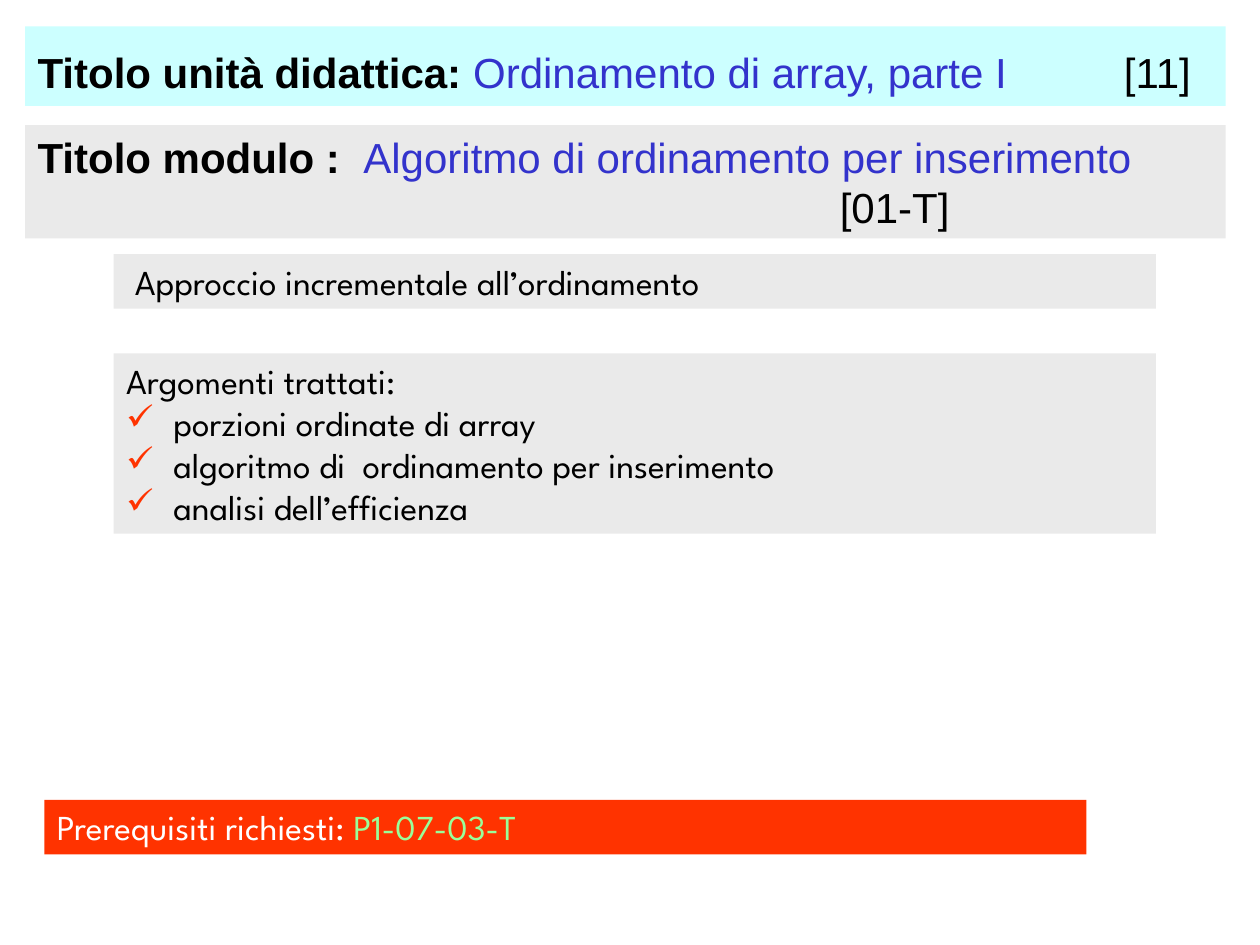
from dataclasses import dataclass

from lxml import etree
from pptx import Presentation
from pptx.dml.color import RGBColor
from pptx.enum.shapes import MSO_SHAPE
from pptx.enum.text import MSO_ANCHOR, MSO_AUTO_SIZE, PP_ALIGN
from pptx.oxml.ns import qn
from pptx.slide import Slide
from pptx.util import Pt

RECTANGLE = MSO_SHAPE.RECTANGLE
TOP = MSO_ANCHOR.TOP
LEFT = PP_ALIGN.LEFT
GROW = MSO_AUTO_SIZE.SHAPE_TO_FIT_TEXT

BLACK = RGBColor(0x00, 0x00, 0x00)
WHITE = RGBColor(0xFF, 0xFF, 0xFF)
BLUE = RGBColor(0x33, 0x33, 0xCC)
CYAN = RGBColor(0xCC, 0xFF, 0xFF)
GRAY = RGBColor(0xEA, 0xEA, 0xEA)
RED = RGBColor(0xFF, 0x33, 0x00)
GREEN = RGBColor(0x99, 0xFF, 0x99)

HEADING_FONT = "Arial"
BODY_FONT = "League Spartan"
BULLET_INDENT = 27


@dataclass(frozen=True)
class Span:
    text: str
    color: RGBColor = BLACK
    size: float = 20
    font: str = BODY_FONT
    bold: bool = False


@dataclass(frozen=True)
class Line:
    spans: tuple[Span, ...]
    indent: float = 0
    tab: float = 0
    bullet: str = ""


@dataclass(frozen=True)
class Panel:
    left: float
    top: float
    width: float
    height: float
    fill: RGBColor
    lines: tuple[Line, ...]


def heading(text: str, color: RGBColor = BLACK, bold: bool = False, size: float = 24) -> Span:
    return Span(text, color, size, HEADING_FONT, bold)


def topic(text: str) -> Line:
    return Line((Span(text),), indent=BULLET_INDENT, bullet="✓")


PANELS = (
    Panel(14.4, 15.1, 686, 45.4, CYAN, (
        Line((
            heading("Titolo unità didattica: ", bold=True),
            heading("Ordinamento di array, parte I\t", BLUE),
            heading("[11]"),
            heading(" ", bold=True, size=32),
        ), tab=620.8),
    )),
    Panel(14.4, 71.5, 686, 64.8, GRAY, (
        Line((
            heading("Titolo modulo :  ", bold=True),
            heading("Algoritmo di ordinamento per inserimento", BLUE),
        )),
        Line((heading("[01-T]"),), indent=458.4),
    )),
    Panel(65, 145.2, 595.5, 31.2, GRAY, (
        Line((Span("Approccio incrementale all’ordinamento"),), indent=5),
    )),
    Panel(65, 202, 595.5, 103, GRAY, (
        Line((Span("Argomenti trattati:"),)),
        topic("porzioni ordinate di array"),
        topic("algoritmo di  ordinamento per inserimento"),
        topic("analisi dell’efficienza"),
    )),
    Panel(25.4, 457, 595.5, 31.2, RED, (
        Line((Span("Prerequisiti richiesti: ", WHITE), Span("P1-07-03-T", GREEN))),
    )),
)


def write_line(paragraph, line: Line) -> None:
    paragraph.alignment = LEFT
    properties = paragraph._p.get_or_add_pPr()
    properties.set("marL", str(Pt(line.indent)))
    if line.bullet:
        properties.set("indent", str(-Pt(line.indent)))
        bullet_color = etree.SubElement(properties, qn("a:buClr"))
        etree.SubElement(bullet_color, qn("a:srgbClr"), val=str(RED))
        etree.SubElement(properties, qn("a:buChar"), char=line.bullet)
    if line.tab:
        tabs = etree.SubElement(properties, qn("a:tabLst"))
        etree.SubElement(tabs, qn("a:tab"), pos=str(Pt(line.tab)), algn="l")
    for span in line.spans:
        run = paragraph.add_run()
        run.text = span.text
        run.font.name = span.font
        run.font.size = Pt(span.size)
        run.font.bold = span.bold
        run.font.color.rgb = span.color


def draw_panel(slide: Slide, panel: Panel) -> None:
    shape = slide.shapes.add_shape(
        RECTANGLE, Pt(panel.left), Pt(panel.top), Pt(panel.width), Pt(panel.height)
    )
    shape.shadow.inherit = False
    shape.fill.solid()
    shape.fill.fore_color.rgb = panel.fill
    shape.line.fill.background()
    text_frame = shape.text_frame
    text_frame.word_wrap = True
    text_frame.vertical_anchor = TOP
    text_frame.auto_size = GROW
    for index, line in enumerate(panel.lines):
        paragraph = text_frame.add_paragraph() if index else text_frame.paragraphs[0]
        write_line(paragraph, line)


def main() -> None:
    presentation = Presentation()
    presentation.slide_width = Pt(720)
    presentation.slide_height = Pt(540)
    slide = presentation.slides.add_slide(presentation.slide_layouts[6])
    for panel in PANELS:
        draw_panel(slide, panel)
    presentation.save("out.pptx")


if __name__ == "__main__":
    main()
